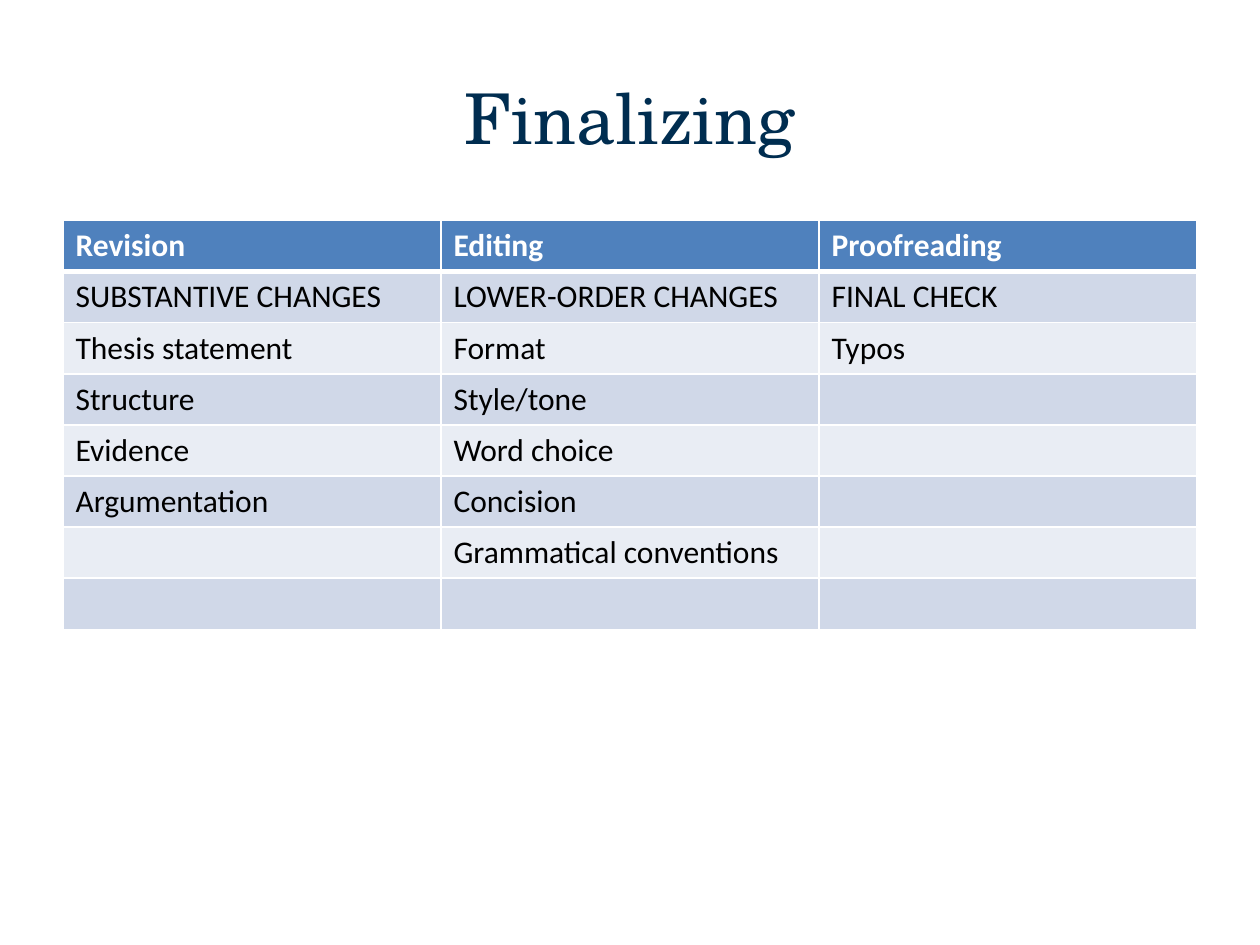
from lxml import etree
from pptx import Presentation
from pptx.dml.color import RGBColor
from pptx.enum.text import MSO_ANCHOR, PP_ALIGN
from pptx.oxml.ns import qn
from pptx.util import Pt

CENTER = PP_ALIGN.CENTER
MIDDLE = MSO_ANCHOR.MIDDLE

# Content
TITLE = "Finalizing"
COLUMNS = {
    "Revision": ["SUBSTANTIVE CHANGES", "Thesis statement", "Structure",
                 "Evidence", "Argumentation"],
    "Editing": ["LOWER-ORDER CHANGES", "Format", "Style/tone", "Word choice",
                "Concision", "Grammatical conventions"],
    "Proofreading": ["FINAL CHECK", "Typos"],
}
ROW_COUNT = 8

# Layout in points and formats
MARGIN, CONTENT_WIDTH = 36, 648
TITLE_TOP, TITLE_HEIGHT = 21.6, 90
TABLE_TOP, ROW_HEIGHT = 126, 29.2
COLORS = {"title": "002D50", "header": "4F81BD", "odd": "D0D8E8",
          "even": "E9EDF4", "white": "FFFFFF", "black": "000000"}
TITLE_FONT = {"name": "TeX Gyre Schola", "size": Pt(40)}
HEADER_FONT = {"name": "Calibri", "size": Pt(18), "bold": True}
BODY_FONT = {**HEADER_FONT, "bold": False}


def format_font(font, values, color):
    for name, value in values.items():
        setattr(font, name, value)
    font.color.rgb = RGBColor.from_string(COLORS[color])


def add_borders(cell, widths):
    properties = cell._tc.get_or_add_tcPr()
    for side, width in widths.items():
        line = etree.SubElement(properties, qn(f"a:ln{side}"), w=str(Pt(width)))
        fill = etree.SubElement(line, qn("a:solidFill"))
        etree.SubElement(fill, qn("a:srgbClr"), val=COLORS["white"])


presentation = Presentation()
presentation.slide_width, presentation.slide_height = Pt(720), Pt(540)
slide = presentation.slides.add_slide(presentation.slide_layouts[6])

# Title
title = slide.shapes.add_textbox(Pt(MARGIN), Pt(TITLE_TOP),
                                 Pt(CONTENT_WIDTH), Pt(TITLE_HEIGHT))
frame = title.text_frame
frame.word_wrap = True
frame.vertical_anchor = MIDDLE
paragraph = frame.paragraphs[0]
paragraph.text = TITLE
paragraph.alignment = CENTER
format_font(paragraph.font, TITLE_FONT, "title")

# Table
table = slide.shapes.add_table(
    ROW_COUNT, len(COLUMNS), Pt(MARGIN), Pt(TABLE_TOP),
    Pt(CONTENT_WIDTH), Pt(ROW_HEIGHT * ROW_COUNT)).table
for row in table.rows:
    row.height = Pt(ROW_HEIGHT)

for column_index, (heading, entries) in enumerate(COLUMNS.items()):
    texts = [heading, *entries]
    for row_index in range(ROW_COUNT):
        is_header = row_index == 0
        cell = table.cell(row_index, column_index)
        add_borders(cell, {"L": 1, "R": 1, "T": 3 if row_index == 1 else 1,
                           "B": 3 if is_header else 1})
        band = "header" if is_header else ("even", "odd")[row_index % 2]
        cell.fill.solid()
        cell.fill.fore_color.rgb = RGBColor.from_string(COLORS[band])
        paragraph = cell.text_frame.paragraphs[0]
        if row_index < len(texts):
            paragraph.text = texts[row_index]
        format_font(paragraph.font, HEADER_FONT if is_header else BODY_FONT,
                    "white" if is_header else "black")

presentation.save("out.pptx")
